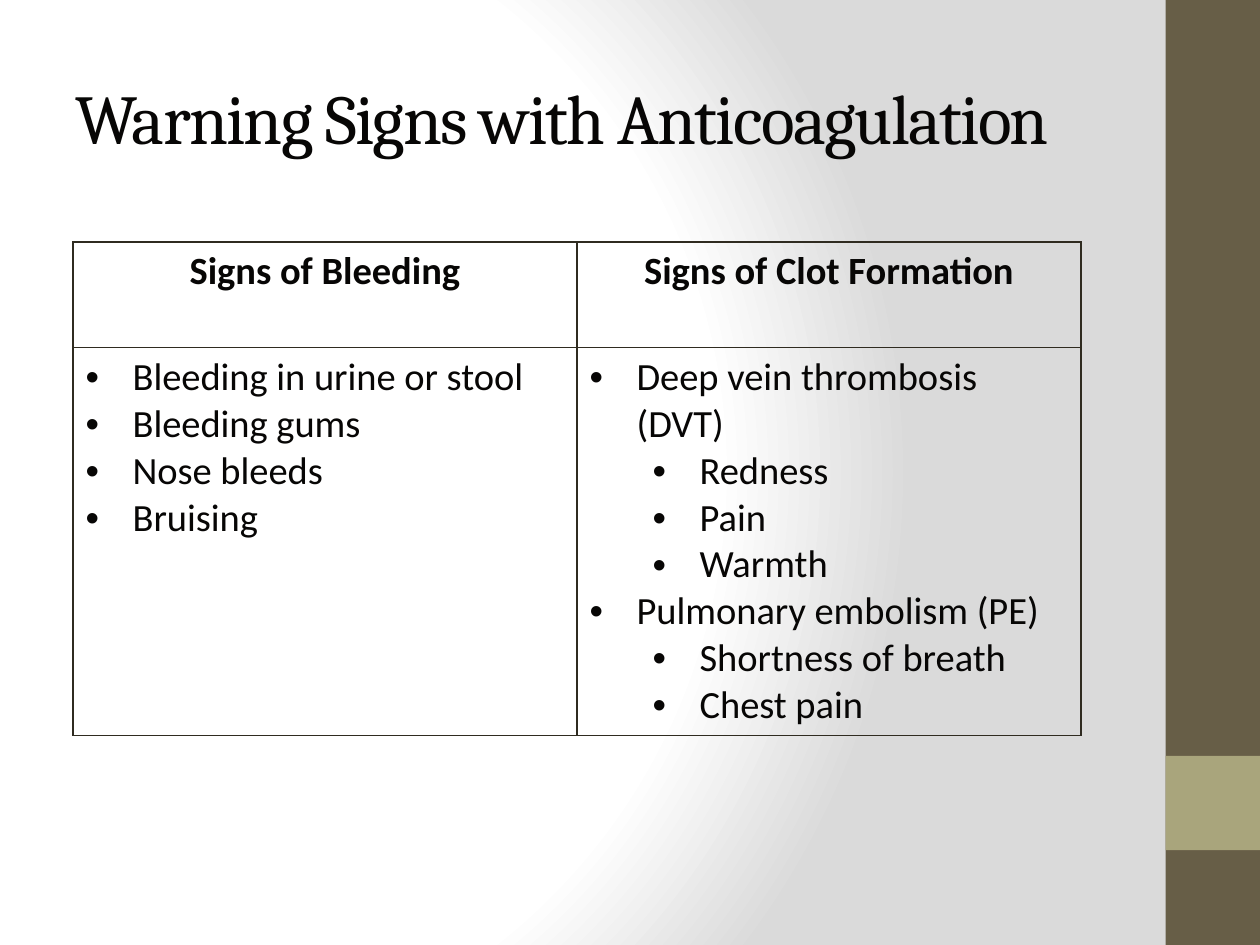
from dataclasses import dataclass

from lxml import etree
from pptx import Presentation
from pptx.dml.color import RGBColor
from pptx.enum.shapes import MSO_SHAPE as Preset
from pptx.enum.text import MSO_ANCHOR as Anchor, PP_ALIGN as Align
from pptx.oxml import parse_xml
from pptx.oxml.ns import nsdecls, qn
from pptx.slide import Slide
from pptx.table import _Cell as Cell
from pptx.text.text import _Paragraph as Paragraph
from pptx.util import Cm, Pt

INK = "070605"
BORDER = "2F2B20"
BAR_LEFT, BAR_WIDTH = 23.5, 1.9
HANGING = 0.95
LEVEL_STEP = 1.27


@dataclass(frozen=True)
class Band:
    top: float
    height: float
    color: str


@dataclass(frozen=True)
class Sign:
    text: str
    level: int = 0


@dataclass(frozen=True)
class Column:
    heading: str
    signs: tuple[Sign, ...]


BANDS = (Band(0, 19.05, "675E47"), Band(15.24, 1.9, "A9A57C"))
COLUMNS = (
    Column("Signs of Bleeding", (
        Sign("Bleeding in urine or stool"),
        Sign("Bleeding gums"),
        Sign("Nose bleeds"),
        Sign("Bruising"),
    )),
    Column("Signs of Clot Formation", (
        Sign("Deep vein thrombosis (DVT)"),
        Sign("Redness", 1),
        Sign("Pain", 1),
        Sign("Warmth", 1),
        Sign("Pulmonary embolism (PE)"),
        Sign("Shortness of breath", 1),
        Sign("Chest pain", 1),
    )),
)


def rgb(color: str) -> RGBColor:
    return RGBColor.from_string(color)


def style(paragraph: Paragraph, name: str, size: float, bold: bool = False) -> None:
    font = paragraph.font
    font.name, font.size, font.bold = name, Pt(size), bold
    font.color.rgb = rgb(INK)


def paint_background(slide: Slide) -> None:
    slide.background.fill.solid()
    properties = slide.element.find(".//" + qn("p:bgPr"))
    stops = "".join(
        f'<a:gs pos="{position}000"><a:srgbClr val="{color}"/></a:gs>'
        for position, color in ((0, "FFFFFF"), (75, "FFFFFF"), (100, "DADADA"))
    )
    gradient = parse_xml(
        f'<a:gradFill {nsdecls("a")} rotWithShape="1"><a:gsLst>{stops}</a:gsLst>'
        '<a:path path="circle"><a:fillToRect l="20000" t="50000" r="100000" b="50000"/>'
        "</a:path></a:gradFill>"
    )
    properties.replace(properties.find(qn("a:solidFill")), gradient)


def draw_band(slide: Slide, band: Band) -> None:
    shape = slide.shapes.add_shape(
        Preset.RECTANGLE, Cm(BAR_LEFT), Cm(band.top), Cm(BAR_WIDTH), Cm(band.height)
    )
    shape.shadow.inherit = False
    shape.fill.solid()
    shape.fill.fore_color.rgb = rgb(band.color)
    shape.line.fill.background()


def write_title(slide: Slide, text: str) -> None:
    title = slide.shapes.title
    title.left, title.top, title.width, title.height = Cm(1.27), Cm(0.76), Cm(21.16), Cm(3.18)
    title.text_frame.text = text
    title.text_frame.vertical_anchor = Anchor.MIDDLE
    paragraph = title.text_frame.paragraphs[0]
    paragraph.alignment = Align.LEFT
    style(paragraph, "Cambria", 40)
    paragraph.runs[0].font._element.set("spc", "-100")


def format_cell(cell: Cell) -> None:
    properties = cell._tc.get_or_add_tcPr()
    for side in ("lnL", "lnR", "lnT", "lnB"):
        line = etree.SubElement(properties, qn(f"a:{side}"), w=str(Pt(1)))
        fill = etree.SubElement(line, qn("a:solidFill"))
        etree.SubElement(fill, qn("a:srgbClr"), val=BORDER)
    cell.fill.background()


def add_bullet(paragraph: Paragraph, level: int) -> None:
    paragraph.level = level
    properties = paragraph._p.get_or_add_pPr()
    properties.set("marL", str(Cm(HANGING + level * LEVEL_STEP)))
    properties.set("indent", str(-Cm(HANGING)))
    bullet_font = etree.Element(qn("a:buFont"), typeface="Arial")
    bullet = etree.Element(qn("a:buChar"), char="•")
    properties.insert(0, bullet_font)
    properties.insert(1, bullet)


def write_heading(cell: Cell, text: str) -> None:
    format_cell(cell)
    cell.text = text
    paragraph = cell.text_frame.paragraphs[0]
    paragraph.alignment = Align.CENTER
    style(paragraph, "Calibri", 22, bold=True)


def write_signs(cell: Cell, signs: tuple[Sign, ...]) -> None:
    format_cell(cell)
    cell.text = "\n".join(sign.text for sign in signs)
    for paragraph, sign in zip(cell.text_frame.paragraphs, signs):
        style(paragraph, "Calibri", 22)
        add_bullet(paragraph, sign.level)


def draw_table(slide: Slide, columns: tuple[Column, ...]) -> None:
    table = slide.shapes.add_table(
        2, len(columns), Cm(1.47), Cm(4.88), Cm(20.32), Cm(9.95)
    ).table
    table.horz_banding = False
    for row, height in zip(table.rows, (2.13, 7.82)):
        row.height = Cm(height)
    for index, column in enumerate(columns):
        write_heading(table.cell(0, index), column.heading)
        write_signs(table.cell(1, index), column.signs)


def main() -> None:
    presentation = Presentation()
    presentation.slide_width, presentation.slide_height = Cm(25.4), Cm(19.05)
    slide = presentation.slides.add_slide(presentation.slide_layouts[5])
    paint_background(slide)
    for band in BANDS:
        draw_band(slide, band)
    write_title(slide, "Warning Signs with Anticoagulation")
    draw_table(slide, COLUMNS)
    presentation.save("out.pptx")


if __name__ == "__main__":
    main()
